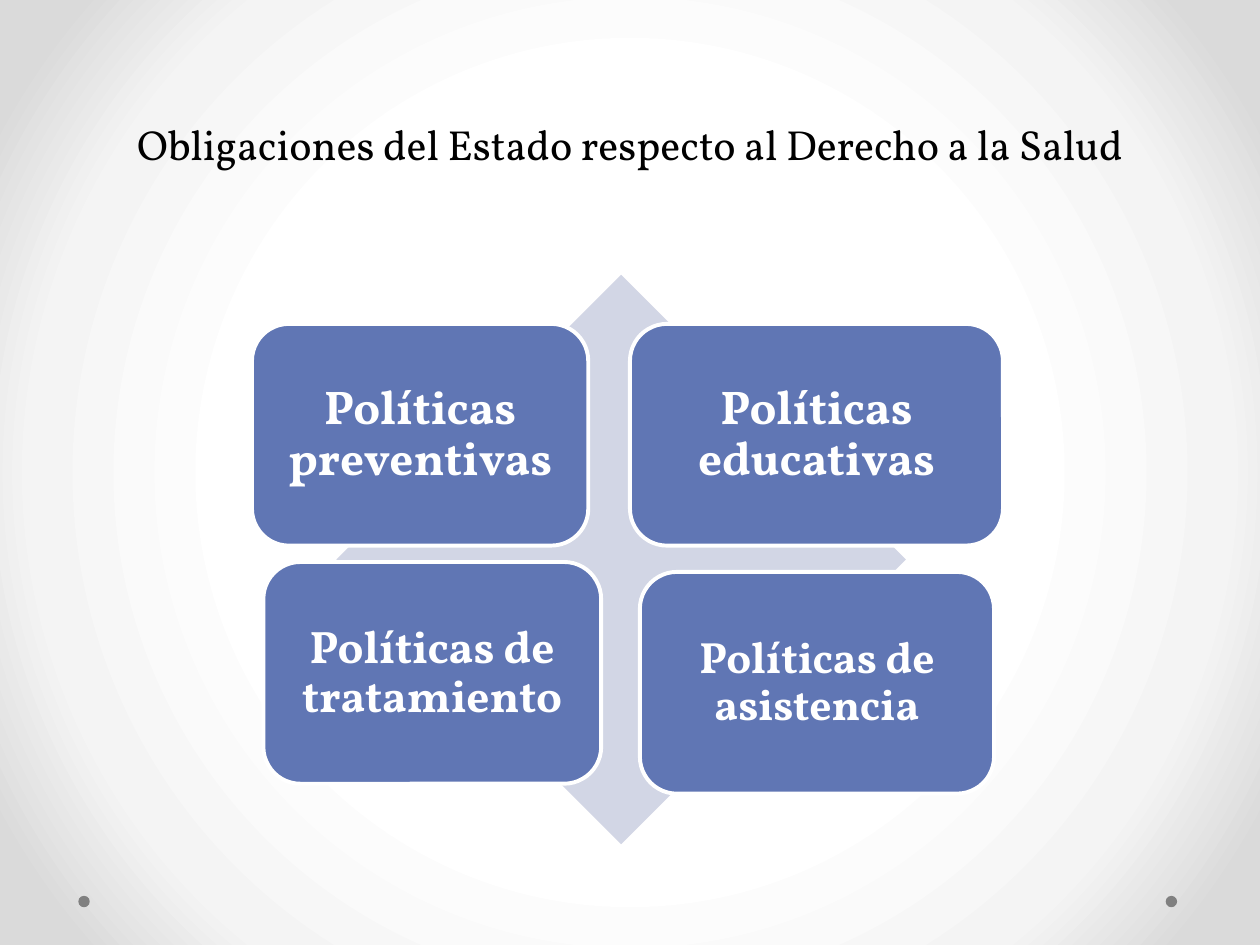
from dataclasses import dataclass

import pptx
import pptx.dml.color
import pptx.enum.shapes
import pptx.enum.text
import pptx.oxml
import pptx.oxml.ns
import pptx.util

Cm = pptx.util.Cm
Pt = pptx.util.Pt
RGBColor = pptx.dml.color.RGBColor
Shape = pptx.enum.shapes.MSO_SHAPE
Anchor = pptx.enum.text.MSO_ANCHOR

FONT = "Vollkorn"
BLACK = RGBColor(0x00, 0x00, 0x00)
WHITE = RGBColor(0xFF, 0xFF, 0xFF)
GREY = RGBColor(0x80, 0x80, 0x80)
BLUE = RGBColor(0x60, 0x76, 0xB4)
PALE_BLUE = RGBColor(0xD2, 0xD6, 0xE5)
BACKGROUND_STOPS = (
    (50, WHITE),
    (76, RGBColor(0xF4, 0xF4, 0xF4)),
    (92, RGBColor(0xDA, 0xDA, 0xDA)),
)


@dataclass
class Policy:
    """A policy card; lengths in centimetres, size in points."""
    text: str
    left: float
    top: float
    width: float
    size: int
    inset: float = 0.28


CARD_HEIGHT = 4.47
POLICIES = (
    Policy("Políticas preventivas", 5.08, 6.53, 6.78, 27),
    Policy("Políticas educativas", 12.7, 6.53, 7.52, 27),
    Policy("Políticas de tratamiento", 5.31, 11.33, 6.81, 26),
    Policy("Políticas de asistencia", 12.9, 11.53, 7.14, 25, 0.25),
)


def write(frame, text: str, *, size: int, color: RGBColor, bold: bool = False,
          anchor=Anchor.MIDDLE, spacing=0.9, inset: float = 0.25) -> None:
    frame.word_wrap = True
    frame.auto_size = pptx.enum.text.MSO_AUTO_SIZE.NONE
    frame.vertical_anchor = anchor
    frame.margin_left = frame.margin_right = Cm(inset)
    frame.margin_top = frame.margin_bottom = Cm(inset)
    paragraph = frame.paragraphs[0]
    paragraph.alignment = pptx.enum.text.PP_ALIGN.CENTER
    paragraph.line_spacing = spacing
    run = paragraph.add_run()
    run.text = text
    run.font.name = FONT
    run.font.size = Pt(size)
    run.font.bold = bold
    run.font.color.rgb = color


def add_plain_shape(slide, kind, left: float, top: float, width: float,
                    height: float, color: RGBColor):
    shape = slide.shapes.add_shape(kind, Cm(left), Cm(top), Cm(width), Cm(height))
    shape.shadow.inherit = False
    shape.fill.solid()
    shape.fill.fore_color.rgb = color
    shape.line.fill.background()
    return shape


def add_policy(slide, policy: Policy) -> None:
    card = add_plain_shape(slide, Shape.ROUNDED_RECTANGLE, policy.left, policy.top,
                           policy.width, CARD_HEIGHT, BLUE)
    card.line.color.rgb = WHITE
    card.line.width = Pt(2.25)
    write(card.text_frame, policy.text, size=policy.size, color=WHITE, bold=True,
          inset=policy.inset)


def set_radial_background(slide) -> None:
    slide.background.fill.solid()
    properties = slide.element.find(".//" + pptx.oxml.ns.qn("p:bgPr"))
    stops = "".join(
        f'<a:gs pos="{percent * 1000}"><a:srgbClr val="{color}"/></a:gs>'
        for percent, color in BACKGROUND_STOPS
    )
    properties.replace(properties[0], pptx.oxml.parse_xml(
        f'<a:gradFill {pptx.oxml.ns.nsdecls("a")} rotWithShape="1">'
        f'<a:gsLst>{stops}</a:gsLst><a:path path="circle">'
        '<a:fillToRect l="50000" t="50000" r="50000" b="50000"/>'
        '</a:path></a:gradFill>'))


def main() -> None:
    presentation = pptx.Presentation()
    presentation.slide_width, presentation.slide_height = Cm(25.4), Cm(19.05)
    slide = presentation.slides.add_slide(presentation.slide_layouts[5])
    set_radial_background(slide)

    # Corner dots
    for dot_left in (23.5, 1.58):
        add_plain_shape(slide, Shape.OVAL, dot_left, 18.06, 0.23, 0.23, GREY)

    # Title
    title = slide.shapes.title
    title.left, title.top = Cm(1.27), Cm(0.74)
    title.width, title.height = Cm(22.86), Cm(2.79)
    write(title.text_frame, "Obligaciones del Estado respecto al Derecho a la Salud",
          size=24, color=BLACK, anchor=Anchor.BOTTOM, spacing=Pt(58), inset=0.13)

    # Policy matrix on its diamond
    add_plain_shape(slide, Shape.DIAMOND, 6.78, 5.54, 11.48, 11.48, PALE_BLUE)
    for policy in POLICIES:
        add_policy(slide, policy)

    presentation.save("out.pptx")


if __name__ == "__main__":
    main()
